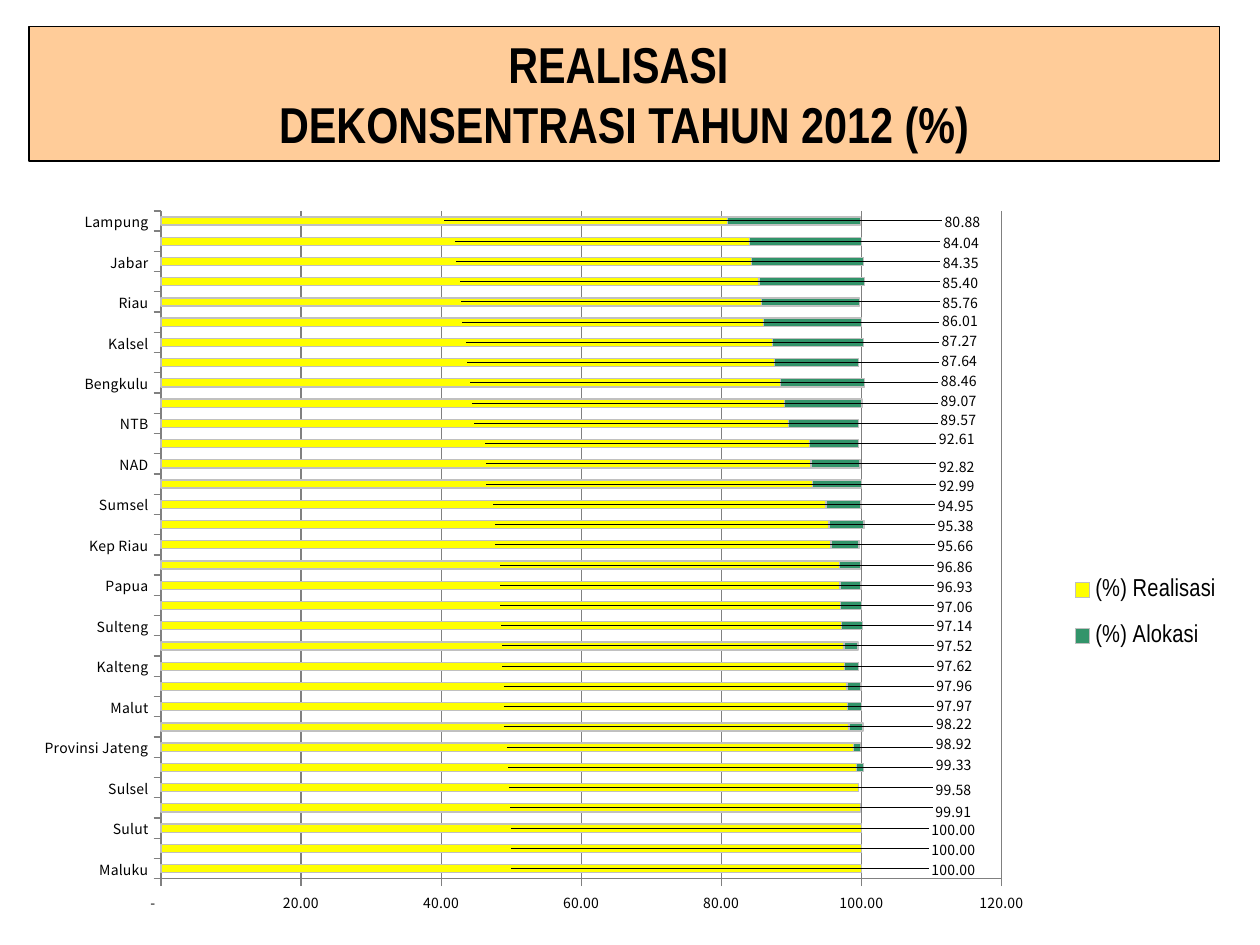
from lxml.etree import SubElement
from pptx import Presentation
from pptx.chart.data import CategoryChartData
from pptx.dml.color import RGBColor
from pptx.enum.chart import XL_CHART_TYPE, XL_LEGEND_POSITION, XL_TICK_MARK
from pptx.enum.shapes import MSO_SHAPE
from pptx.enum.text import MSO_ANCHOR, PP_ALIGN
from pptx.oxml import parse_xml
from pptx.oxml.ns import nsdecls, qn
from pptx.util import Pt

TITLE_LINES = ("REALISASI ", "DEKONSENTRASI TAHUN 2012 (%)")
# province, realised percentage, vertical label nudge in points
PROVINCES = [
    ("Maluku", 100, 0), ("Papua Barat", 100, 0), ("Sulut", 100, 0.5),
    ("NTT", 99.91, 1.5), ("Sulsel", 99.58, 1), ("Babel", 99.33, -2),
    ("Provinsi Jateng", 98.92, -2.5), ("Sultra", 98.22, -2.5),
    ("Malut", 97.97, -1), ("Sumut", 97.96, -1), ("Kalteng", 97.62, -1),
    ("Gorontalo", 97.52, -0.5), ("Sulteng", 97.14, -0.5), ("Jambi", 97.06, 0),
    ("Papua", 96.93, 0.5), ("Sulbar", 96.86, 0.5), ("Kep Riau", 95.66, 0),
    ("Bali", 95.38, 0), ("Sumsel", 94.95, 0.5), ("Yogyakarta", 92.99, 0.5),
    ("NAD", 92.82, 1), ("Kalbar", 92.61, -3.5), ("NTB", 89.57, -2.5),
    ("Kaltim", 89.07, -2), ("Bengkulu", 88.46, -2), ("DKI Jakarta", 87.64, -1.5),
    ("Kalsel", 87.27, -1.5), ("Jatim", 86.01, -1.5), ("Riau", 85.76, 0),
    ("Banten", 85.4, 0), ("Jabar", 84.35, 0), ("Sumbar", 84.04, 0.5),
    ("Lampung", 80.88, 0),
]
THEME = {
    "title_font": "Arial Narrow", "chart_font": "Noto Sans CJK KR",
    "title_size": 28.8, "chart_size": 8, "legend_size": 14,
    "text": "000000", "banner": "FFCC99", "axis": "808080", "bar_edge": "C0C0C0",
    "Realisasi": "FFFF00", "Alokasi": "32946A",
}
NUMBER_FORMAT = '_(* #,##0.00_);_(* \\(#,##0.00\\);_(* "-"??_);_(@_)'
CHART_BOX = (16.5, 112.3, 686.2, 410.4)
PLOT = {"x": 0.11, "y": 0.02, "w": 0.7, "h": 0.93}
LEGEND = {"x": 0.86, "y": 0.5, "w": 0.14, "h": 0.16}
AXIS_MAXIMUM = 120
LABEL_CENTRE = 0.77


def color(name):
    """Return the theme colour called name."""
    return RGBColor.from_string(THEME[name])


def style_font(font, face, size, bold=False):
    """Give a font its theme face, size and colour."""
    font.name, font.size, font.bold = THEME[face], Pt(THEME[size]), bold
    font.color.rgb = color("text")


def style_line(line, name):
    """Draw a thin line in a theme colour."""
    line.color.rgb = color(name)
    line.width = Pt(0.75)


def manual_layout(inner=False, edge=True, **fractions):
    """Return a chart layout element with the given fractions."""
    layout = parse_xml(f"<c:layout {nsdecls('c')}><c:manualLayout/></c:layout>")
    settings = [("layoutTarget", "inner")] if inner else []
    if edge:
        settings += [("xMode", "edge"), ("yMode", "edge")]
    for tag, value in settings + [(key, f"{part:.4f}") for key, part in fractions.items()]:
        SubElement(layout[0], qn(f"c:{tag}")).set("val", value)
    return layout


def replace_layout(parent, layout, index):
    """Put a layout at an index of its parent, replacing any earlier one."""
    for old in parent.findall(qn("c:layout")):
        parent.remove(old)
    parent.insert(index, layout)


def add_banner(slide):
    """Add the title banner."""
    banner = slide.shapes.add_shape(
        MSO_SHAPE.RECTANGLE, Pt(16.5), Pt(15), Pt(680.5), Pt(77))
    banner.shadow.inherit = False
    banner.fill.solid()
    banner.fill.fore_color.rgb = color("banner")
    style_line(banner.line, "text")
    frame = banner.text_frame
    frame.word_wrap = True
    frame.vertical_anchor = MSO_ANCHOR.MIDDLE
    paragraph = frame.paragraphs[0]
    paragraph.alignment = PP_ALIGN.CENTER
    for number, text in enumerate(TITLE_LINES):
        if number:
            paragraph.add_line_break()
        run = paragraph.add_run()
        run.text = text
        style_font(run.font, "title_font", "title_size", True)


def style_axes(chart):
    """Style both axes and the vertical gridlines."""
    for axis in (chart.category_axis, chart.value_axis):
        axis.major_tick_mark = XL_TICK_MARK.OUTSIDE
        axis.minor_tick_mark = XL_TICK_MARK.NONE
        style_line(axis.format.line, "axis")
        style_font(axis.tick_labels.font, "chart_font", "chart_size")
    axis = chart.value_axis
    axis.minimum_scale, axis.maximum_scale, axis.major_unit = 0, AXIS_MAXIMUM, 20
    axis.has_major_gridlines = True
    style_line(axis.major_gridlines.format.line, "axis")
    axis.tick_labels.number_format = NUMBER_FORMAT
    axis.tick_labels.number_format_is_linked = False


def add_value_labels(chart, series):
    """Line up the value labels in a column beyond the bars."""
    for number in range(len(PROVINCES)):
        style_font(series.points[number].data_label.font, "chart_font", "chart_size")
    for label, (_, value, nudge) in zip(chart.element.xpath(".//c:dLbl"), PROVINCES):
        bar_centre = PLOT["x"] + PLOT["w"] * value / AXIS_MAXIMUM / 2
        target = LABEL_CENTRE + (100 - value) * 0.0004
        replace_layout(label, manual_layout(
            edge=False, x=target - bar_centre, y=nudge / CHART_BOX[3]), 1)
        number_format = parse_xml(f"<c:numFmt {nsdecls('c')}/>")
        number_format.set("formatCode", NUMBER_FORMAT)
        number_format.set("sourceLinked", "0")
        label.insert(2, number_format)


def add_chart(slide):
    """Add the stacked bar chart of realisation by province."""
    data = CategoryChartData()
    data.categories = [name for name, _, _ in PROVINCES]
    data.add_series("(%) Realisasi", [value for _, value, _ in PROVINCES])
    data.add_series("(%) Alokasi", [round(100 - value) for _, value, _ in PROVINCES])
    chart = slide.shapes.add_chart(
        XL_CHART_TYPE.BAR_STACKED, *map(Pt, CHART_BOX), data).chart
    chart.has_title = False
    style_font(chart.font, "chart_font", "chart_size")
    style_axes(chart)
    plot = chart.plots[0]
    plot.gap_width, plot.overlap, plot.vary_by_categories = 150, 100, False
    for series, name in zip(plot.series, ("Realisasi", "Alokasi")):
        series.format.fill.solid()
        series.format.fill.fore_color.rgb = color(name)
        style_line(series.format.line, "bar_edge")
    add_value_labels(chart, plot.series[0])
    chart.has_legend = True
    chart.legend.position = XL_LEGEND_POSITION.RIGHT
    chart.legend.include_in_layout = False
    style_font(chart.legend.font, "title_font", "legend_size")
    replace_layout(chart.element.xpath(".//c:legend")[0], manual_layout(**LEGEND), 1)
    replace_layout(chart.element.xpath(".//c:plotArea")[0],
                   manual_layout(inner=True, **PLOT), 0)


def main():
    """Build and save the slide."""
    presentation = Presentation()
    presentation.slide_width, presentation.slide_height = Pt(720), Pt(540)
    slide = presentation.slides.add_slide(presentation.slide_layouts[6])
    add_banner(slide)
    add_chart(slide)
    presentation.save("out.pptx")


if __name__ == "__main__":
    main()
